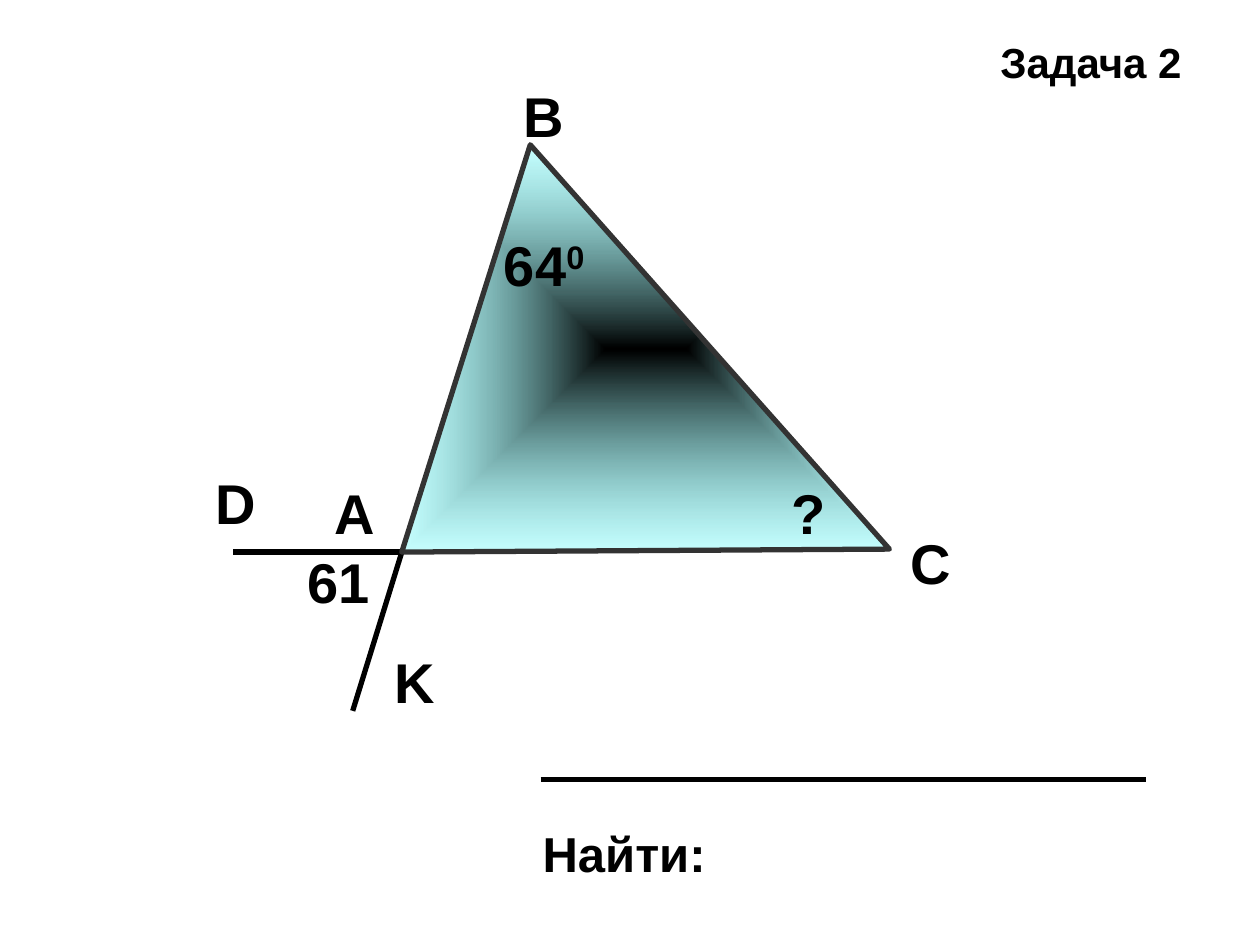
from dataclasses import dataclass

from pptx import Presentation
from pptx.dml.color import RGBColor
from pptx.enum.shapes import MSO_CONNECTOR
from pptx.enum.text import MSO_ANCHOR, MSO_AUTO_SIZE, PP_ALIGN
from pptx.oxml import parse_xml
from pptx.oxml.ns import nsdecls, qn
from pptx.util import Cm, Pt


@dataclass(frozen=True)
class Theme:
    font: str = "Arial"
    ink: str = "000000"
    outline: str = "333333"
    core: str = "000000"
    rim: str = "66FFFF"
    rim_alpha: int = 36000
    stroke: float = 3
    title_size: int = 24
    prompt_size: int = 28
    label_size: int = 32


THEME = Theme()

# Content: lengths in centimetres
TITLE = ("Задача 2", (19.91, 0.61, 4.29, 1.27))
PROMPT = ("Найти:", (10.69, 16.48, 3.78, 1.44))

A, B, C = (8.1, 11.13), (10.69, 2.92), (17.93, 11.07)
D, K = (4.7, 11.13), (7.11, 14.33)
SEGMENTS = [(A, K), (A, D), ((10.9, 15.72), (23.11, 15.72))]

POINT_WIDTH, ANGLE_WIDTH, LABEL_HEIGHT = 1.32, 2.79, 1.6
POINT_LABELS = [
    ("А", 6.5, 9.53),
    ("В", 10.31, 1.52),
    ("С", 18.11, 10.52),
    ("D", 4.09, 9.32),
    ("K", 7.7, 12.93),
]
# Text, superscript, left, top
ANGLE_LABELS = [
    ("61", "", 5.94, 10.92),
    ("64", "0", 9.91, 4.52),
    ("?", "", 15.7, 9.53),
]


def write_text(holder, text, *, at, size, superscript="", wrap=True):
    holder.left, holder.top, holder.width, holder.height = map(Cm, at)
    frame = holder.text_frame
    frame.word_wrap = wrap
    frame.auto_size = MSO_AUTO_SIZE.NONE
    frame.vertical_anchor = MSO_ANCHOR.TOP
    paragraph = frame.paragraphs[0]
    paragraph.alignment = PP_ALIGN.LEFT
    for part, raised in ((text, False), (superscript, True)):
        if not part:
            continue
        run = paragraph.add_run()
        run.text = part
        run.font.name = THEME.font
        run.font.size = Pt(size)
        run.font.bold = True
        run.font.color.rgb = RGBColor.from_string(THEME.ink)
        if raised:
            run.font._element.set("baseline", "30000")


def set_stroke(part, colour):
    part.line.color.rgb = RGBColor.from_string(colour)
    part.line.width = Pt(THEME.stroke)


def draw_segment(slide, start, end):
    segment = slide.shapes.add_connector(
        MSO_CONNECTOR.STRAIGHT, *map(Cm, start + end))
    set_stroke(segment, THEME.ink)
    segment._element.spPr.append(
        parse_xml(f"<a:effectLst {nsdecls('a')}/>"))


def draw_triangle(slide, first, *others):
    builder = slide.shapes.build_freeform(*map(Cm, first))
    builder.add_line_segments(
        [tuple(map(Cm, corner)) for corner in others], close=True)
    triangle = builder.convert_to_shape()
    triangle.shadow.inherit = False
    set_stroke(triangle, THEME.outline)
    # Rectangular gradient with a translucent rim
    gradient = parse_xml(
        f'<a:gradFill {nsdecls("a")} rotWithShape="1"><a:gsLst>'
        f'<a:gs pos="0"><a:srgbClr val="{THEME.core}"/></a:gs>'
        f'<a:gs pos="100000"><a:srgbClr val="{THEME.rim}">'
        f'<a:alpha val="{THEME.rim_alpha}"/></a:srgbClr></a:gs></a:gsLst>'
        '<a:path path="rect"><a:fillToRect l="50000" t="50000" '
        'r="50000" b="50000"/></a:path></a:gradFill>')
    triangle._element.spPr.find(qn("a:custGeom")).addnext(gradient)


def main():
    deck = Presentation()
    deck.slide_width, deck.slide_height = Cm(25.4), Cm(19.05)
    slide = deck.slides.add_slide(deck.slide_layouts[5])

    # Title and prompt
    title, title_at = TITLE
    write_text(slide.shapes.title, title, at=title_at,
               size=THEME.title_size, wrap=False)
    prompt, prompt_at = PROMPT
    write_text(slide.shapes.add_textbox(0, 0, 0, 0), prompt, at=prompt_at,
               size=THEME.prompt_size, wrap=False)

    # Rays and answer rule, then the triangle above them
    for start, end in SEGMENTS:
        draw_segment(slide, start, end)
    draw_triangle(slide, A, C, B)

    # Point and angle labels
    labels = [(text, "", left, top, POINT_WIDTH)
              for text, left, top in POINT_LABELS]
    labels += [(*angle, ANGLE_WIDTH) for angle in ANGLE_LABELS]
    for text, superscript, left, top, width in labels:
        write_text(slide.shapes.add_textbox(0, 0, 0, 0), text,
                   at=(left, top, width, LABEL_HEIGHT),
                   size=THEME.label_size, superscript=superscript)

    deck.save("out.pptx")


if __name__ == "__main__":
    main()
